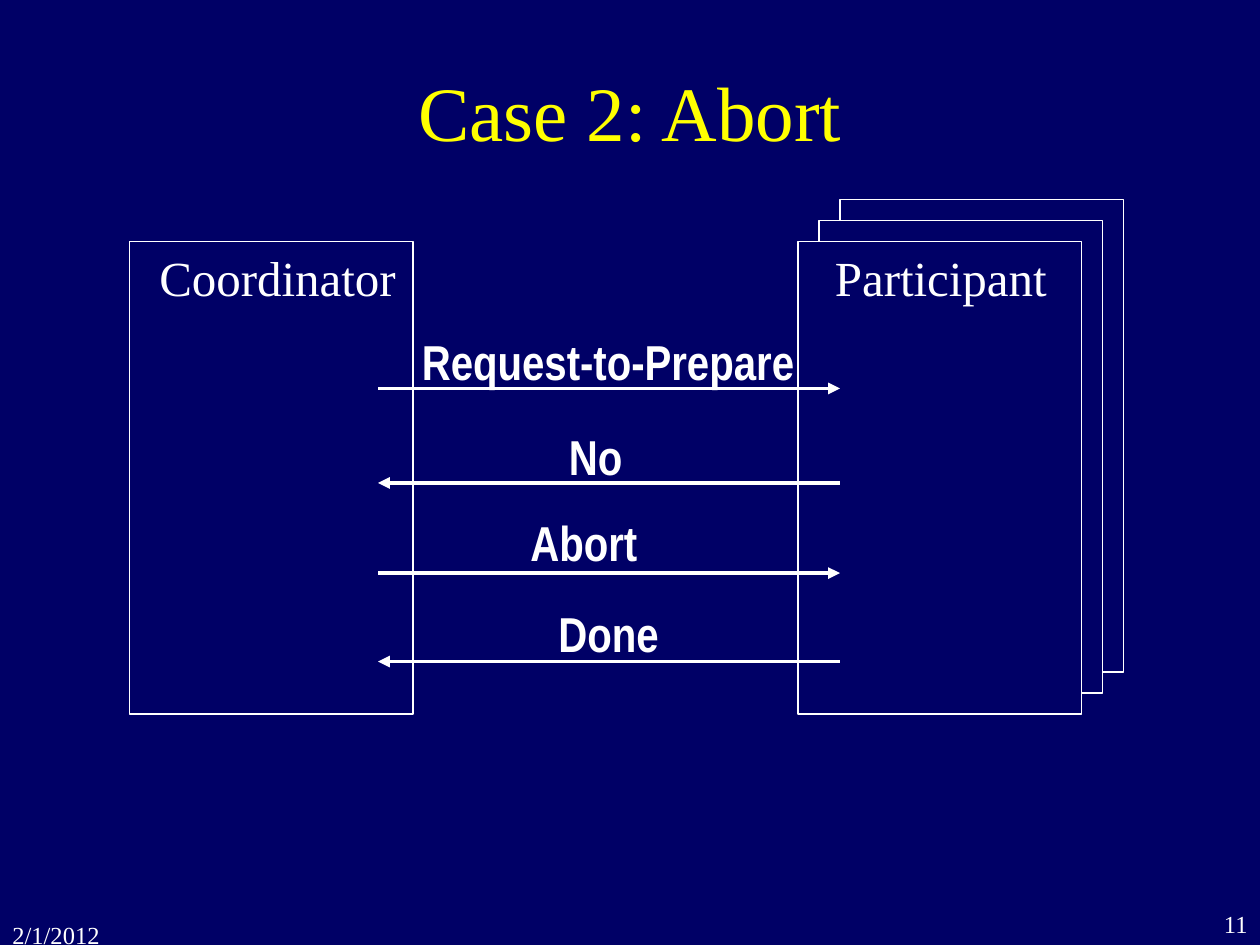
from pptx import Presentation
from pptx.dml.color import RGBColor
from pptx.enum.shapes import MSO_CONNECTOR as Link, MSO_SHAPE as Shape
from pptx.enum.text import MSO_ANCHOR as Anchor, PP_ALIGN as Align
from pptx.oxml.ns import qn
from pptx.util import Pt
from lxml import etree

NAVY, WHITE, YELLOW = "000066", "FFFFFF", "FFFF00"
SERIF, NARROW = "Times New Roman", "Arial Narrow"

# Content: text and box, as left, top, width, height in points
TITLE = ("Case 2: Abort", (54, 18, 612, 90))
DATE = ("2/1/2012", (0, 522, 72, 18))
NUMBER = ("11", (654, 516, 66, 24))
ROLES = [
    ("Coordinator", (84, 138, 150, 41)),
    ("Participant", (470, 138, 135.5, 41)),
]
# Messages: text, box, line height, goes to the participant
STEPS = [
    ("Request-to-Prepare", (234, 186, 227.5, 41), 222, True),
    ("No", (318, 240, 45.5, 41), 276, False),
    ("Abort", (296, 289.5, 75.5, 41), 327.5, True),
    ("Done", (312, 341.5, 72, 41), 378, False),
]
CARD = (162, 270)
LEFT, RIGHT, TOP = 74, 456, 138
STACK, SHIFT = 3, 12
ENDS = (216, 480)


def color(code):
    return RGBColor.from_string(code)


def style(obj, vals):
    for key, val in vals.items():
        setattr(obj, key, val)


def write(shape, text, size, face=SERIF, ink=WHITE, bold=False, align=Align.LEFT):
    para = shape.text_frame.paragraphs[0]
    para.text = text
    para.alignment = align
    style(para.font, {"size": Pt(size), "name": face, "bold": bold})
    para.font.color.rgb = color(ink)


def label(text, box, size, wrap=False, **look):
    shape = slide.shapes.add_textbox(*map(Pt, box))
    shape.text_frame.word_wrap = wrap
    write(shape, text, size, **look)


def card(left, top, filled):
    shape = slide.shapes.add_shape(Shape.RECTANGLE, *map(Pt, (left, top, *CARD)))
    shape.shadow.inherit = False
    if filled:
        shape.fill.solid()
        shape.fill.fore_color.rgb = color(NAVY)
    else:
        shape.fill.background()
    shape.line.color.rgb = color(WHITE)
    shape.line.width = Pt(0.75)


def arrow(start, end, y):
    link = slide.shapes.add_connector(Link.STRAIGHT, *map(Pt, (start, y, end, y)))
    link.line.color.rgb = color(WHITE)
    link.line.width = Pt(2.25)
    etree.SubElement(link.line._get_or_add_ln(), qn("a:tailEnd"), type="triangle")
    etree.SubElement(link._element.spPr, qn("a:effectLst"))


# Slide and background
deck = Presentation()
style(deck, {"slide_width": Pt(720), "slide_height": Pt(540)})
slide = deck.slides.add_slide(deck.slide_layouts[5])
back = slide.background.fill
back.solid()
back.fore_color.rgb = color(NAVY)

# Title
title = slide.shapes.title
text, box = TITLE
style(title, dict(zip(("left", "top", "width", "height"), map(Pt, box))))
title.text_frame.vertical_anchor = Anchor.MIDDLE
write(title, text, 44, ink=YELLOW, align=Align.CENTER)

# Footer
label(*DATE, 14, wrap=True)
label(*NUMBER, 14, wrap=True, align=Align.RIGHT)

# One coordinator, a stack of participants
card(LEFT, TOP, False)
for step in reversed(range(STACK)):
    card(RIGHT + step * SHIFT, TOP - step * SHIFT, True)
for text, box in ROLES:
    label(text, box, 28)

# Messages between them
for text, box, y, ahead in STEPS:
    label(text, box, 28, face=NARROW, bold=True)
    arrow(*(ENDS if ahead else ENDS[::-1]), y)

deck.save("out.pptx")
